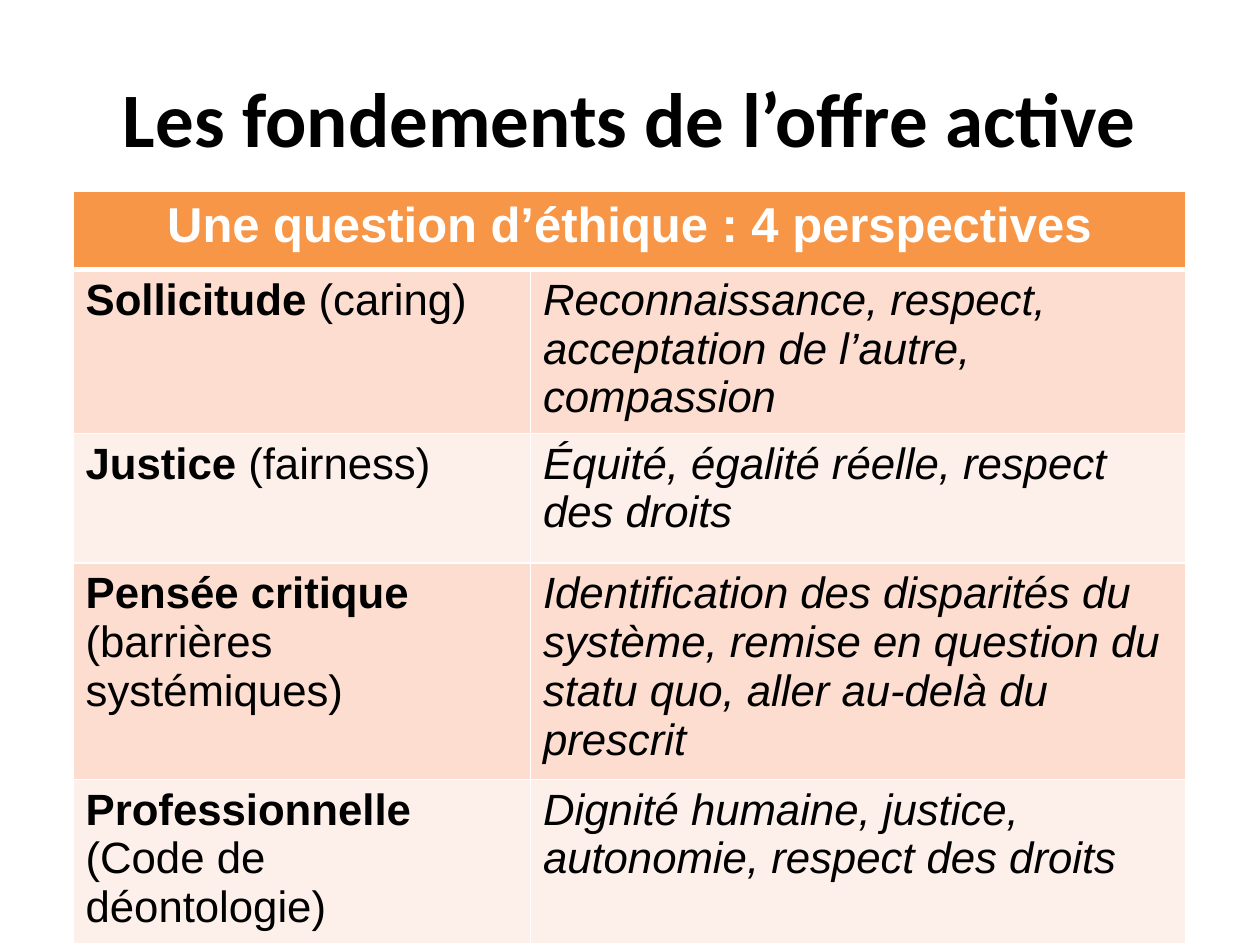
from pptx import Presentation
from pptx.dml.color import RGBColor
from pptx.enum.text import MSO_ANCHOR, PP_ALIGN
from pptx.oxml import parse_xml
from pptx.oxml.ns import nsdecls
from pptx.util import Inches, Pt

COLORS = {
    "text": "000000",
    "white": "FFFFFF",
    "header": "F79646",
    "band_dark": "FCDDCF",
    "band_light": "FDEFE9",
}
TITLE = "Les fondements de l’offre active"
HEADER = "Une question d’éthique : 4 perspectives"
# Perspective, explanation, values
PERSPECTIVES = [
    ("Sollicitude", " (caring)",
     "Reconnaissance, respect, acceptation de l’autre, compassion"),
    ("Justice", " (fairness)",
     "Équité, égalité réelle, respect des droits"),
    ("Pensée critique ", "(barrières systémiques)",
     "Identification des disparités du système, remise en question du "
     "statu quo, aller au-delà du prescrit"),
    ("Professionnelle ", "(Code de déontologie)",
     "Dignité humaine, justice, autonomie, respect des droits"),
]
COLUMN_WIDTHS = [3.63, 5.2]
ROW_HEIGHTS = [0.62, 1.26, 1.03, 1.65, 1.25]


def color(name):
    return RGBColor.from_string(COLORS[name])


def add_run(paragraph, text, size, color_name, name="Arial",
            bold=False, italic=False):
    run = paragraph.add_run()
    run.text = text
    font = run.font
    font.name = name
    font.size = Pt(size)
    font.bold = bold
    font.italic = italic
    font.color.rgb = color(color_name)


def style_cell(cell, fill_name, bottom_width=1):
    """Fill the cell and give it white borders."""
    cell.margin_bottom = 0
    cell.fill.solid()
    cell.fill.fore_color.rgb = color(fill_name)
    properties = cell._tc.get_or_add_tcPr()
    widths = {"lnL": 1, "lnR": 1, "lnT": 1, "lnB": bottom_width}
    for position, (side, width) in enumerate(widths.items()):
        properties.insert(position, parse_xml(
            f'<a:{side} {nsdecls("a")} w="{Pt(width)}"><a:solidFill>'
            f'<a:srgbClr val="{COLORS["white"]}"/></a:solidFill></a:{side}>'))


def add_title(slide, left, top, width, height):
    shape = slide.shapes.add_textbox(left, top, width, height)
    frame = shape.text_frame
    frame.word_wrap = True
    frame.vertical_anchor = MSO_ANCHOR.MIDDLE
    paragraph = frame.paragraphs[0]
    paragraph.alignment = PP_ALIGN.CENTER
    add_run(paragraph, TITLE, 44, "text", "Calibri", bold=True)


def add_perspectives_table(slide, left, top):
    table = slide.shapes.add_table(
        len(ROW_HEIGHTS), len(COLUMN_WIDTHS), left, top,
        Inches(sum(COLUMN_WIDTHS)), Inches(sum(ROW_HEIGHTS))).table
    for column, width in zip(table.columns, COLUMN_WIDTHS):
        column.width = Inches(width)
    for row, height in zip(table.rows, ROW_HEIGHTS):
        row.height = Inches(height)

    # Header across both columns
    for cell in table.rows[0].cells:
        style_cell(cell, "header", bottom_width=3)
    header = table.cell(0, 0)
    header.merge(table.cell(0, 1))
    paragraph = header.text_frame.paragraphs[0]
    paragraph.alignment = PP_ALIGN.CENTER
    add_run(paragraph, HEADER, 28, "white", bold=True)

    # One banded row per perspective
    for index, (name, explanation, values) in enumerate(PERSPECTIVES, 1):
        cells = [table.cell(index, column) for column in range(2)]
        for cell in cells:
            style_cell(cell, "band_dark" if index % 2 else "band_light")
        label, description = [cell.text_frame.paragraphs[0] for cell in cells]
        add_run(label, name, 25, "text", bold=True)
        add_run(label, explanation, 25, "text")
        add_run(description, values, 25, "text", italic=True)


def main():
    presentation = Presentation()
    presentation.slide_width = Inches(10)
    presentation.slide_height = Inches(7.5)
    slide = presentation.slides.add_slide(presentation.slide_layouts[6])
    add_title(slide, Inches(0.5), Inches(0.3), Inches(9), Inches(1.25))
    add_perspectives_table(slide, Inches(0.58), Inches(1.52))
    presentation.save("out.pptx")


if __name__ == "__main__":
    main()
